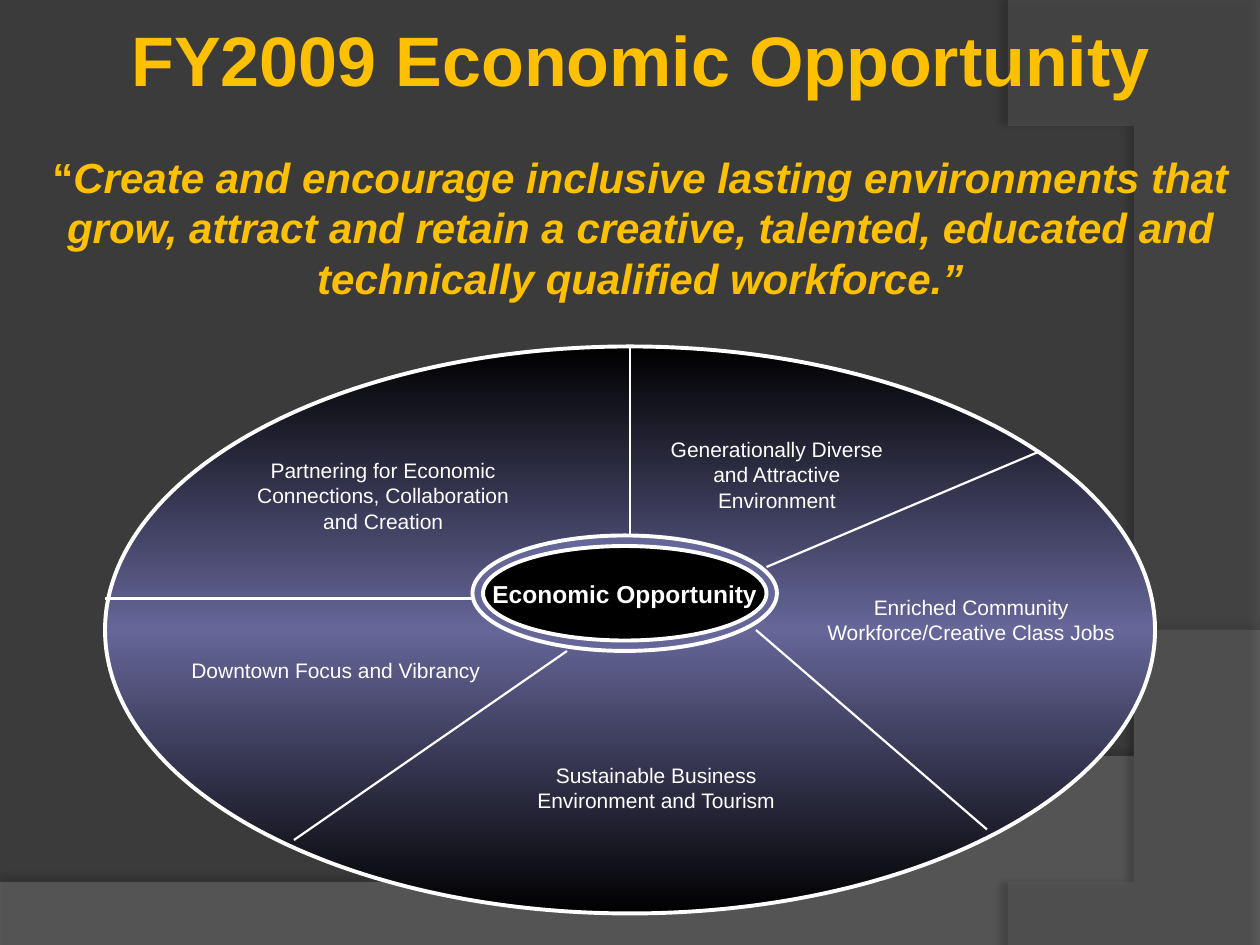
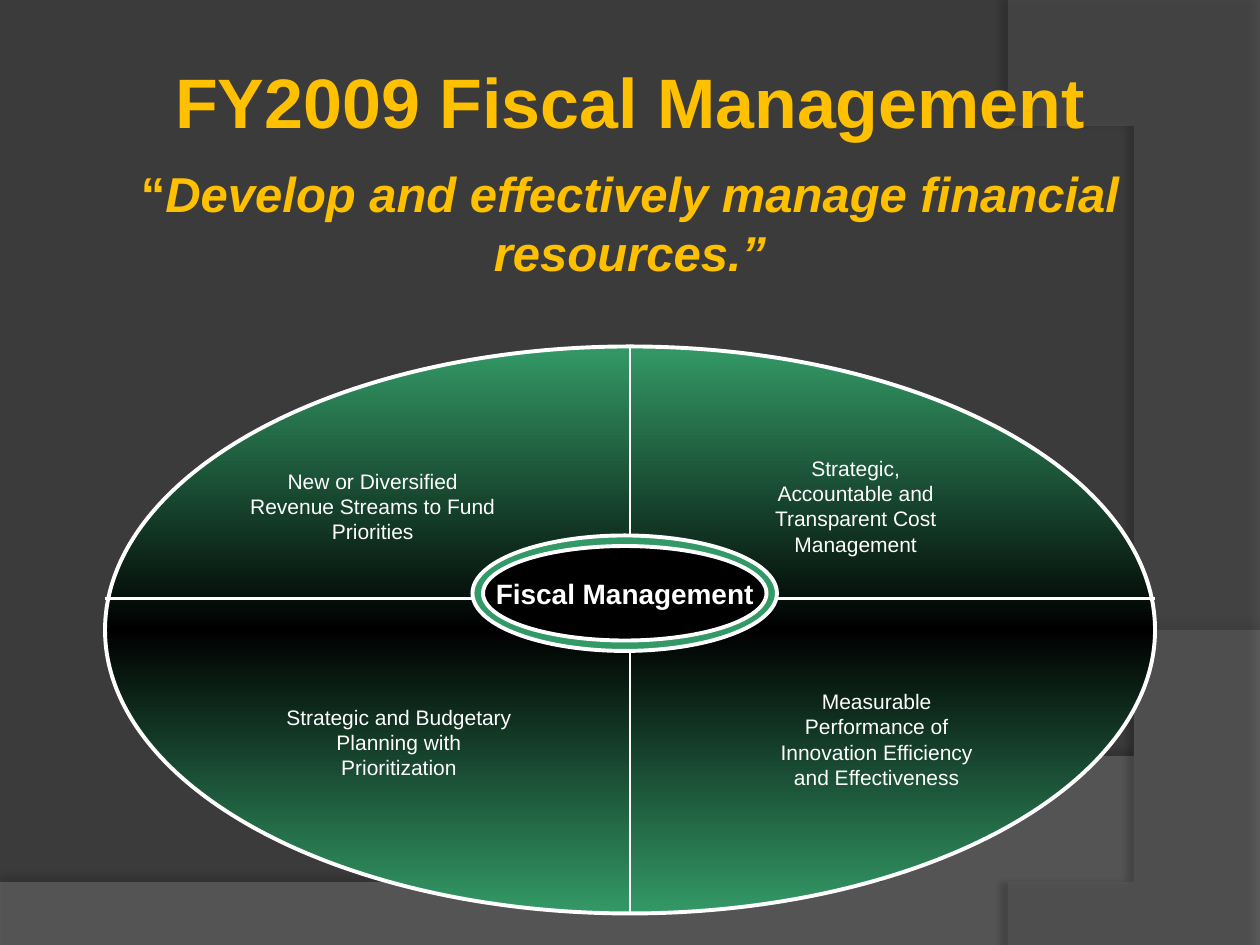
from copy import deepcopy

from lxml.etree import SubElement
from pptx import Presentation
from pptx.dml.color import RGBColor
from pptx.enum.shapes import MSO_CONNECTOR, MSO_SHAPE
from pptx.enum.text import MSO_ANCHOR, MSO_AUTO_SIZE, PP_ALIGN
from pptx.oxml.ns import qn
from pptx.util import Inches, Pt

GRID = 12
FONT = "Arial"
WHITE, BLACK, GOLD, CHARCOAL = "FFFFFF", "000000", "FFC000", "3B3B3B"

SWOOSHES = [
    {"start": (0, 7.05), "corners": [(0, 7.5), (10, 7.5), (10, 5.2)],
     "curve": [(5.59, 7.29), (3.91, 7.19), (0, 7.05)],
     "color": "7F7F7F", "alpha": 45, "shadow": (35, 3.5, 270)},
    {"start": (10, 0.02), "corners": [(10, 7.5), (8.21, 7.5)],
     "curve": [(9.35, 6.19), (10.18, 3), (8, 0)],
     "color": "5E5E5E", "alpha": 40, "shadow": (45, 4, 180)},
]

# Wheel parts are given in grid units: left, top, columns, rows.
WHEEL, HUB_RING, HUB = (10, 33, 100, 54), (45, 51, 29, 11), (46, 52, 27, 9)
UP_SPOKE, LEFT_SPOKE = (60, 51, 60, 33), (45, 57, 10, 57)

GOALS = [
    {"title": "FY2009 Economic Opportunity",
     "quote": "Create and encourage inclusive lasting environments that grow, attract and "
              "retain a creative, talented, educated and technically qualified workforce.”",
     "heading": (2, 1, 118, 28.7), "quote_size": 24, "quote_gap": 29,
     "hub": "Economic Opportunity", "hub_size": 14,
     "gradient": (BLACK, "666699", BLACK), "ring": "666699",
     "sectors": [
         ("Sustainable Business Environment and Tourism", 48, 72, 29, 2),
         ("Enriched Community Workforce/Creative Class Jobs", 77, 56, 31, 2),
         ("Partnering for Economic Connections, Collaboration and Creation", 23, 43, 27, 3),
         ("Downtown Focus and Vibrancy", 17, 62, 30, 1),
         ("Generationally Diverse and Attractive Environment", 62, 41, 24, 3)],
     "spokes": [UP_SPOKE, LEFT_SPOKE, (72, 60, 94, 79), (28, 80, 54, 62), (73, 54, 99, 43)]},
    {"title": "FY2009 Fiscal Management",
     "quote": "Develop and effectively manage financial resources.”",
     "heading": (0, 5, 120, 22.7), "quote_size": 28, "quote_gap": 12,
     "hub": "Fiscal Management", "hub_size": 16,
     "gradient": ("339966", BLACK, "339966"), "ring": "339966",
     "sectors": [
         ("Strategic and Budgetary Planning with Prioritization", 26, 66.5, 24, 3),
         ("Measurable Performance of Innovation Efficiency and Effectiveness", 72, 65, 23, 4),
         ("New or Diversified Revenue Streams to Fund Priorities", 22, 44, 27, 3),
         ("Strategic, Accountable and Transparent Cost Management", 71, 42.8, 21, 4)],
     "spokes": [UP_SPOKE, LEFT_SPOKE, (60, 62, 60, 87), (74, 57, 110, 57)]},
]


def rgb(code):
    return RGBColor.from_string(code)


def cells(*units):
    return [Inches(unit / GRID) for unit in units]


def style(run, size, color=WHITE, bold=False, italic=False):
    font = run.font
    font.name, font.size, font.bold, font.italic = FONT, Pt(size), bold, italic
    font.color.rgb = rgb(color)


def bezier(start, control1, control2, end, steps=60):
    for step in range(1, steps + 1):
        t = step / steps
        weights = ((1 - t) ** 3, 3 * t * (1 - t) ** 2, 3 * t * t * (1 - t), t ** 3)
        points = (start, control1, control2, end)
        yield tuple(sum(w * p[axis] for w, p in zip(weights, points)) for axis in (0, 1))


def add_alpha(color_element, percent):
    SubElement(color_element, qn("a:alpha"), val=str(percent * 1000))


def add_swoosh(slide, start, corners, curve, color, alpha, shadow):
    builder = slide.shapes.build_freeform(*start, scale=Inches(1))
    builder.add_line_segments([*corners, *bezier(corners[-1], *curve)], close=True)
    swoosh = builder.convert_to_shape()
    swoosh.fill.solid()
    swoosh.fill.fore_color.rgb = rgb(color)
    swoosh.line.fill.background()
    swoosh.shadow.inherit = False
    properties = swoosh._element.spPr
    add_alpha(properties.find(qn("a:solidFill")).find(qn("a:srgbClr")), alpha)
    opacity, distance, angle = shadow
    cast = SubElement(properties.find(qn("a:effectLst")), qn("a:outerShdw"),
                      blurRad=str(Pt(4)), dist=str(Pt(distance)),
                      dir=str(angle * 60000), algn="ctr", rotWithShape="0")
    add_alpha(SubElement(cast, qn("a:srgbClr"), val=BLACK), opacity)


def add_ellipse(slide, area, colors):
    ellipse = slide.shapes.add_shape(MSO_SHAPE.OVAL, *cells(*area))
    ellipse.shadow.inherit = False
    ellipse.line.color.rgb = rgb(WHITE)
    ellipse.line.width = Pt(2.25)
    if len(colors) == 1:
        ellipse.fill.solid()
        ellipse.fill.fore_color.rgb = rgb(colors[0])
        return ellipse
    ellipse.fill.gradient()
    ellipse.fill.gradient_angle = 90
    stops = ellipse._element.spPr.find(qn("a:gradFill")).find(qn("a:gsLst"))
    stops.append(deepcopy(stops[0]))
    for index, (stop, color) in enumerate(zip(ellipse.fill.gradient_stops, colors)):
        stop.position = index / (len(colors) - 1)
        stop.color.rgb = rgb(color)
    return ellipse


def add_frame(slide, area):
    frame = slide.shapes.add_textbox(*cells(*area)).text_frame
    frame.word_wrap = True
    frame.auto_size = MSO_AUTO_SIZE.SHAPE_TO_FIT_TEXT
    return frame


def add_sector(slide, text, left, top, columns, lines):
    frame = add_frame(slide, (left, top, columns, 1.2 + 2.4 * lines))
    frame.text = text
    frame.paragraphs[0].alignment = PP_ALIGN.CENTER
    style(frame.paragraphs[0].runs[0], 12)


def add_spoke(slide, ends):
    spoke = slide.shapes.add_connector(MSO_CONNECTOR.STRAIGHT, *cells(*ends))
    spoke.line.color.rgb = rgb(WHITE)
    spoke.line.width = Pt(1.25)
    SubElement(spoke._element.spPr, qn("a:effectLst"))


def add_hub(slide, text, size):
    hub = add_ellipse(slide, HUB, (BLACK,)).text_frame
    hub.word_wrap = False
    hub.vertical_anchor = MSO_ANCHOR.MIDDLE
    hub.text = text
    hub.paragraphs[0].alignment = PP_ALIGN.CENTER
    style(hub.paragraphs[0].runs[0], size, bold=True)


def add_heading(slide, goal):
    frame = add_frame(slide, goal["heading"])
    frame.text = goal["title"]
    title, quote = frame.paragraphs[0], frame.add_paragraph()
    title.alignment = quote.alignment = PP_ALIGN.CENTER
    style(title.runs[0], 40, GOLD, bold=True)
    quote.space_before = Pt(goal["quote_gap"])
    for text, italic in (("“", False), (goal["quote"], True)):
        run = quote.add_run()
        run.text = text
        style(run, goal["quote_size"], GOLD, bold=True, italic=italic)


def add_goal(deck, goal):
    slide = deck.slides.add_slide(deck.slide_layouts[6])
    slide.background.fill.solid()
    slide.background.fill.fore_color.rgb = rgb(CHARCOAL)
    for swoosh in SWOOSHES:
        add_swoosh(slide, **swoosh)
    add_ellipse(slide, WHEEL, goal["gradient"])
    add_ellipse(slide, HUB_RING, (goal["ring"],))
    add_hub(slide, goal["hub"], goal["hub_size"])
    for sector in goal["sectors"]:
        add_sector(slide, *sector)
    for spoke in goal["spokes"]:
        add_spoke(slide, spoke)
    add_heading(slide, goal)


def main():
    """Build the two goal wheels and save the deck."""
    deck = Presentation()
    deck.slide_width, deck.slide_height = Inches(10), Inches(7.5)
    for goal in GOALS:
        add_goal(deck, goal)
    deck.save("out.pptx")


if __name__ == "__main__":
    main()
